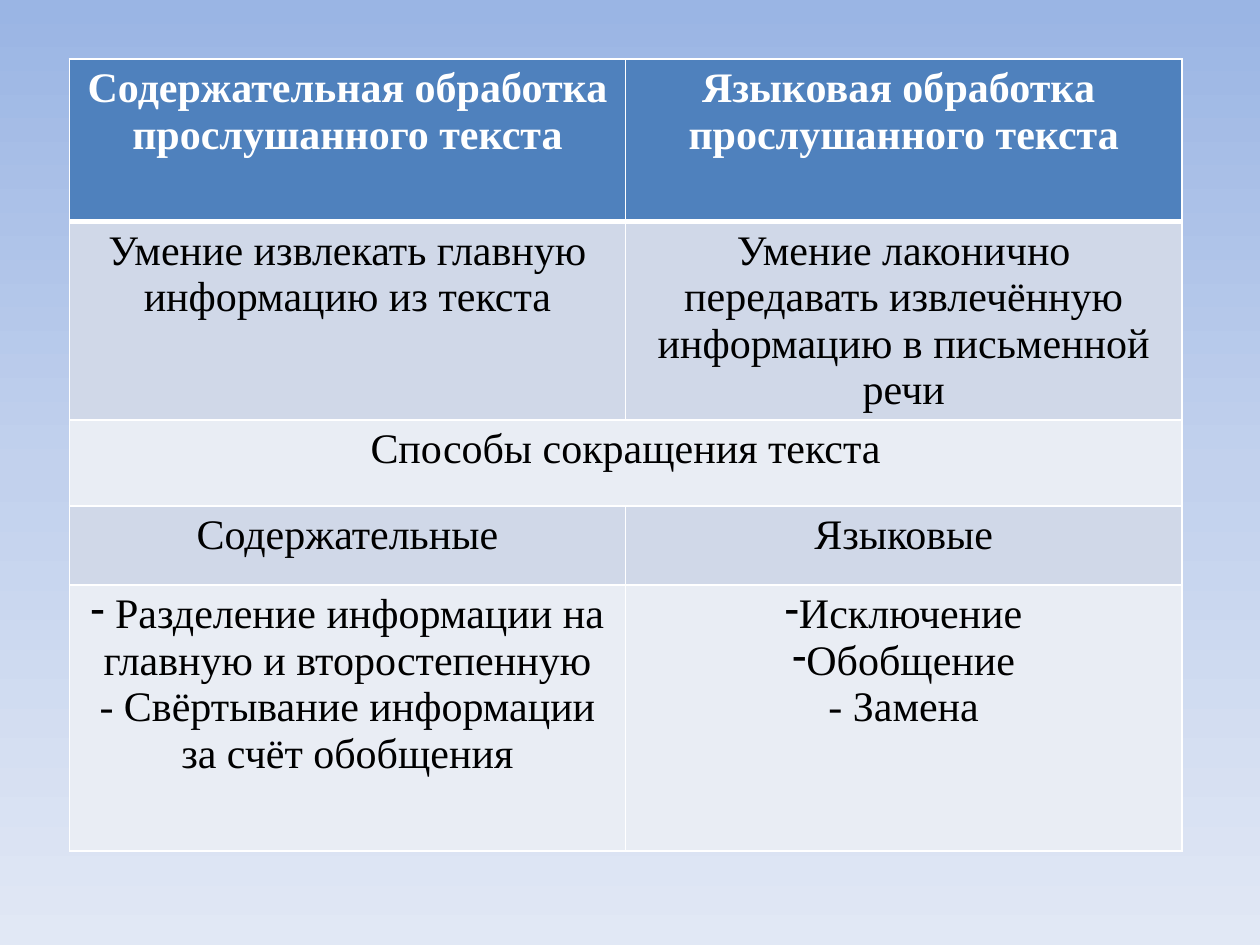
from pptx import Presentation
from pptx.dml.color import RGBColor as Rgb
from pptx.enum.text import PP_ALIGN as Align
from pptx.oxml.ns import qn
from pptx.util import Inches, Pt
from lxml.etree import SubElement as Sub

HUES = {
    "top": "9AB5E4", "mid": "C2D1ED", "low": "E1E8F5",
    "head": "4F81BD", "band": "D0D8E8", "pale": "E9EDF4",
    "white": "FFFFFF", "black": "000000",
}
HIGHS = [1.29, 1.57, 0.68, 0.63, 2.11]
FILLS = ["head", "band", "pale", "band", "pale"]
ROWS = [
    [["Содержательная обработка прослушанного текста"],
     ["Языковая обработка ", "прослушанного текста"]],
    [["Умение извлекать главную информацию из текста"],
     ["Умение лаконично передавать извлечённую информацию в письменной речи"]],
    [["Способы сокращения текста"]],
    [["Содержательные"], ["Языковые"]],
    [[("-", " Разделение информации на главную и второстепенную"),
      "- Свёртывание информации за счёт обобщения"],
     [("-", "Исключение"), ("-", "Обобщение"), "- Замена"]],
]


class Deck:
    font = "Times New Roman"
    size = Pt(24)

    def __init__(self):
        self.prs = Presentation()
        self.prs.slide_width = Inches(10)
        self.prs.slide_height = Inches(7.5)
        self.slide = self.prs.slides.add_slide(self.prs.slide_layouts[6])

    def ground(self, *names):
        fill = self.slide.background.fill
        fill.gradient()
        fill.gradient_angle = 270
        stops = fill._fill._gradFill.find(qn("a:gsLst"))
        for stop in list(stops):
            stops.remove(stop)
        step = 100000 // (len(names) - 1)
        for i, name in enumerate(names):
            stop = Sub(stops, qn("a:gs"), pos=str(i * step))
            Sub(stop, qn("a:srgbClr"), val=HUES[name])

    def edge(self, cell, side, width):
        line = Sub(cell._tc.get_or_add_tcPr(), qn("a:ln" + side), w=str(Pt(width)))
        fill = Sub(line, qn("a:solidFill"))
        Sub(fill, qn("a:srgbClr"), val=HUES["white"])

    def para(self, par, item, head):
        par.alignment = Align.CENTER
        mark, text = item if isinstance(item, tuple) else (None, item)
        if mark:
            props = par._p.get_or_add_pPr()
            props.set("marL", "0")
            props.set("indent", "0")
            Sub(props, qn("a:buFontTx"))
            Sub(props, qn("a:buChar"), char=mark)
        run = par.add_run()
        run.text = text
        run.font.name = self.font
        run.font.size = self.size
        run.font.bold = head
        run.font.color.rgb = Rgb.from_string(HUES["white" if head else "black"])

    def cell(self, cell, items, hue, head, over):
        for side in "LRTB":
            thick = side == "B" and head or side == "T" and over
            self.edge(cell, side, 3 if thick else 1)
        cell.fill.solid()
        cell.fill.fore_color.rgb = Rgb.from_string(HUES[hue])
        frame = cell.text_frame
        for i, item in enumerate(items):
            par = frame.add_paragraph() if i else frame.paragraphs[0]
            self.para(par, item, head)

    def table(self, left, top, wide, rows, highs, fills):
        cols = max(map(len, rows))
        box = [Inches(n) for n in (left, top, wide, sum(highs))]
        grid = self.slide.shapes.add_table(len(rows), cols, *box).table
        for r, row in enumerate(rows):
            grid.rows[r].height = Inches(highs[r])
            if len(row) < cols:
                grid.cell(r, 0).merge(grid.cell(r, cols - 1))
            for c in range(cols):
                items = row[c] if c < len(row) else []
                self.cell(grid.cell(r, c), items, fills[r], r == 0, r == 1)

    def save(self):
        self.prs.save("out.pptx")


def main():
    deck = Deck()
    deck.ground("top", "mid", "low")
    deck.table(0.55, 0.47, 8.83, ROWS, HIGHS, FILLS)
    deck.save()


if __name__ == "__main__":
    main()
